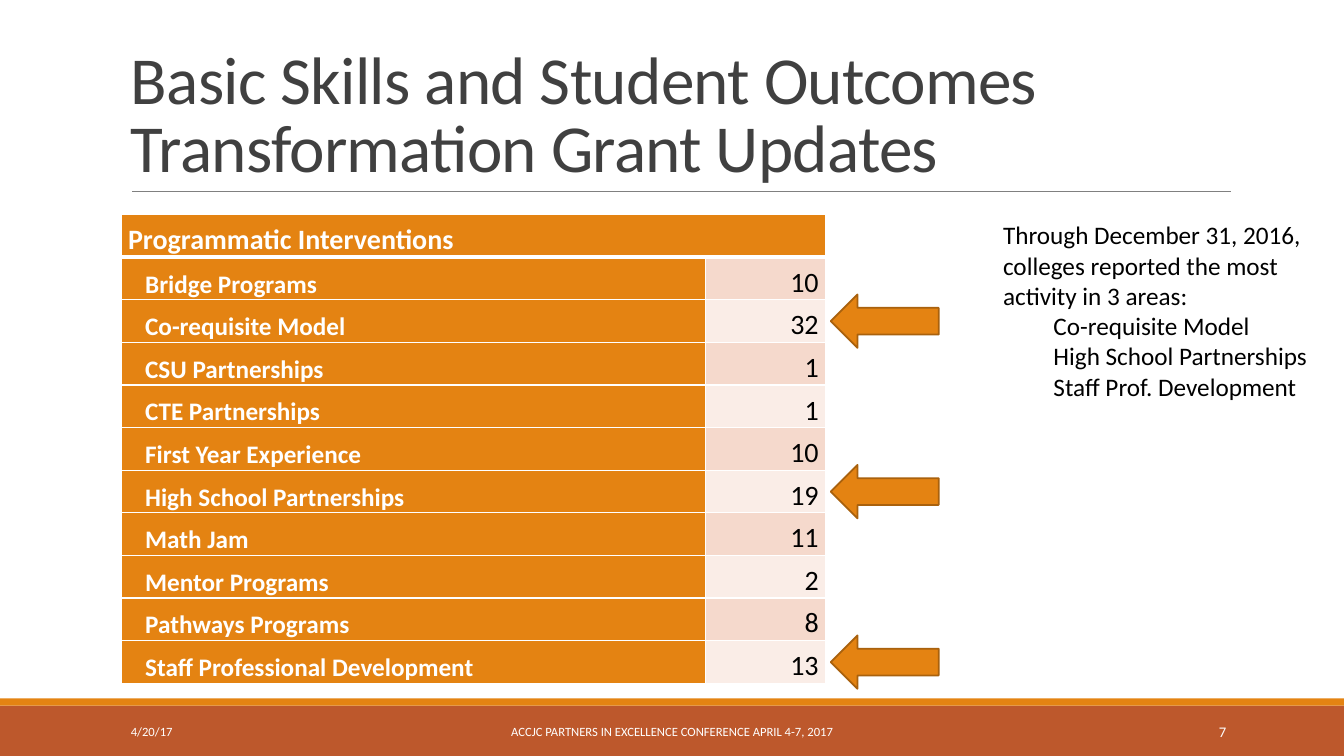
from lxml.etree import SubElement
from pptx import Presentation
from pptx.dml.color import RGBColor
from pptx.enum.shapes import MSO_CONNECTOR, MSO_SHAPE
from pptx.enum.text import MSO_ANCHOR, PP_ALIGN
from pptx.oxml.ns import qn
from pptx.util import Inches, Pt

WHITE = RGBColor(255, 255, 255)
BLACK = RGBColor(0, 0, 0)
ORANGE = RGBColor(0xE4, 0x83, 0x12)
RUST = RGBColor(0xBD, 0x58, 0x2C)
BROWN = RGBColor(0xA9, 0x61, 0x0D)
GRAY = RGBColor(0x80, 0x80, 0x80)
DARK = RGBColor(0x40, 0x40, 0x40)
TINTS = (RGBColor(0xF5, 0xD9, 0xCC), RGBColor(0xFA, 0xED, 0xE7))

LEFT, TOP = 1.2, 2.13
ROW = 4.65 / 11
ITEMS = (
    ("Bridge Programs", 10),
    ("Co-requisite Model", 32),
    ("CSU Partnerships", 1),
    ("CTE Partnerships", 1),
    ("First Year Experience", 10),
    ("High School Partnerships", 19),
    ("Math Jam", 11),
    ("Mentor Programs", 2),
    ("Pathways Programs", 8),
    ("Staff Professional Development", 13),
)
PEAKS = (2, 6, 10)


def style(para, size, color, bold=False, align=PP_ALIGN.LEFT):
    para.alignment = align
    for run in para.runs:
        run.font.name = "Calibri"
        run.font.size = Pt(size)
        run.font.bold = bold
        run.font.color.rgb = color


def indent(para, width):
    props = para._p.get_or_add_pPr()
    props.set("marL", str(Inches(width)))
    props.set("indent", "0")


def add_text(slide, box, text, size, color, align=PP_ALIGN.LEFT,
             anchor=MSO_ANCHOR.MIDDLE):
    frame = slide.shapes.add_textbox(*map(Inches, box)).text_frame
    frame.word_wrap = True
    frame.vertical_anchor = anchor
    frame.text = text
    for para in frame.paragraphs:
        style(para, size, color, align=align)
    return frame


def add_block(slide, kind, box, fill, line=None):
    shape = slide.shapes.add_shape(kind, *map(Inches, box))
    shape.shadow.inherit = False
    shape.fill.solid()
    shape.fill.fore_color.rgb = fill
    if line is None:
        shape.line.fill.background()
    else:
        shape.line.color.rgb = line
        shape.line.width = Pt(1.25)


def add_rule(slide, left, right, top):
    rule = slide.shapes.add_connector(
        MSO_CONNECTOR.STRAIGHT, Inches(left), Inches(top), Inches(right), Inches(top))
    rule.line.color.rgb = GRAY
    rule.line.width = Pt(0.5)
    SubElement(rule._element.spPr, qn("a:effectLst"))


def add_edges(cell, base):
    props = cell._tc.get_or_add_tcPr()
    for side in "LRTB":
        width = base if side == "B" else 1
        edge = SubElement(props, qn(f"a:ln{side}"), w=str(Pt(width)))
        fill = SubElement(edge, qn("a:solidFill"))
        SubElement(fill, qn("a:srgbClr"), val=str(WHITE))


def fill_cell(cell, text, size, color, fill, bold=True, align=PP_ALIGN.LEFT, base=1):
    add_edges(cell, base)
    cell.fill.solid()
    cell.fill.fore_color.rgb = fill
    cell.vertical_anchor = MSO_ANCHOR.BOTTOM
    cell.margin_left = cell.margin_right = Inches(0.07)
    cell.margin_top = cell.margin_bottom = 0
    cell.text = text
    para = cell.text_frame.paragraphs[0]
    para.line_spacing = 1.15
    style(para, size, color, bold, align)
    return para


def add_grid(slide):
    count = len(ITEMS) + 1
    grid = slide.shapes.add_table(
        count, 2, Inches(LEFT), Inches(TOP), Inches(6.99), Inches(ROW * count)).table
    for column, width in zip(grid.columns, (5.8, 1.19)):
        column.width = Inches(width)
    for row in grid.rows:
        row.height = Inches(ROW)
    head = grid.cell(0, 0)
    head.merge(grid.cell(0, 1))
    fill_cell(head, "Programmatic Interventions", 20, WHITE, ORANGE, base=3)
    add_edges(grid.cell(0, 1), 3)
    for row, (name, value) in enumerate(ITEMS, 1):
        para = fill_cell(grid.cell(row, 0), name, 18, WHITE, ORANGE)
        indent(para, 0.17)
        fill_cell(grid.cell(row, 1), str(value), 20, BLACK, TINTS[(row - 1) % 2],
                  False, PP_ALIGN.RIGHT)


def add_title(slide):
    frame = add_text(
        slide, (LEFT, 0.31, 11, 1.59),
        "Basic Skills and Student Outcomes Transformation Grant Updates",
        48, DARK, anchor=MSO_ANCHOR.BOTTOM)
    para = frame.paragraphs[0]
    para.line_spacing = 0.85
    para.runs[0]._r.get_or_add_rPr().set("spc", "-50")


def add_note(slide):
    lines = (
        "Through December 31, 2016, colleges reported the most activity in 3 areas:",
        "Co-requisite Model",
        "High School Partnerships",
        "Staff Prof. Development",
    )
    frame = add_text(slide, (9.85, TOP, 3.48, 1.92), "\n".join(lines),
                     18, BLACK, anchor=MSO_ANCHOR.TOP)
    for para in frame.paragraphs[1:]:
        indent(para, 0.5)


def add_footer(slide):
    for left, width, text, size, align in (
        (LEFT, 2.7, "4/20/17", 9, PP_ALIGN.LEFT),
        (4.03, 5.27, "ACCJC PARTNERS IN EXCELLENCE CONFERENCE APRIL 4-7, 2017",
         9, PP_ALIGN.CENTER),
        (10.83, 1.43, "7", 10.5, PP_ALIGN.RIGHT),
    ):
        add_text(slide, (left, 7.06, width, 0.4), text, size, WHITE, align)


def main():
    deck = Presentation()
    deck.slide_width, deck.slide_height = Inches(13.33), Inches(7.5)
    slide = deck.slides.add_slide(deck.slide_layouts[6])
    add_block(slide, MSO_SHAPE.RECTANGLE, (0, 7, 13.33, 0.5), RUST)
    add_block(slide, MSO_SHAPE.RECTANGLE, (0, 6.93, 13.33, 0.07), ORANGE)
    add_rule(slide, 1.31, 12.21, 1.9)
    add_title(slide)
    add_grid(slide)
    add_footer(slide)
    for row in PEAKS:
        top = TOP + (row + 0.5) * ROW - 0.53 / 2
        add_block(slide, MSO_SHAPE.LEFT_ARROW, (8.24, top, 1.07, 0.53), ORANGE, BROWN)
    add_note(slide)
    deck.save("out.pptx")


if __name__ == "__main__":
    main()
